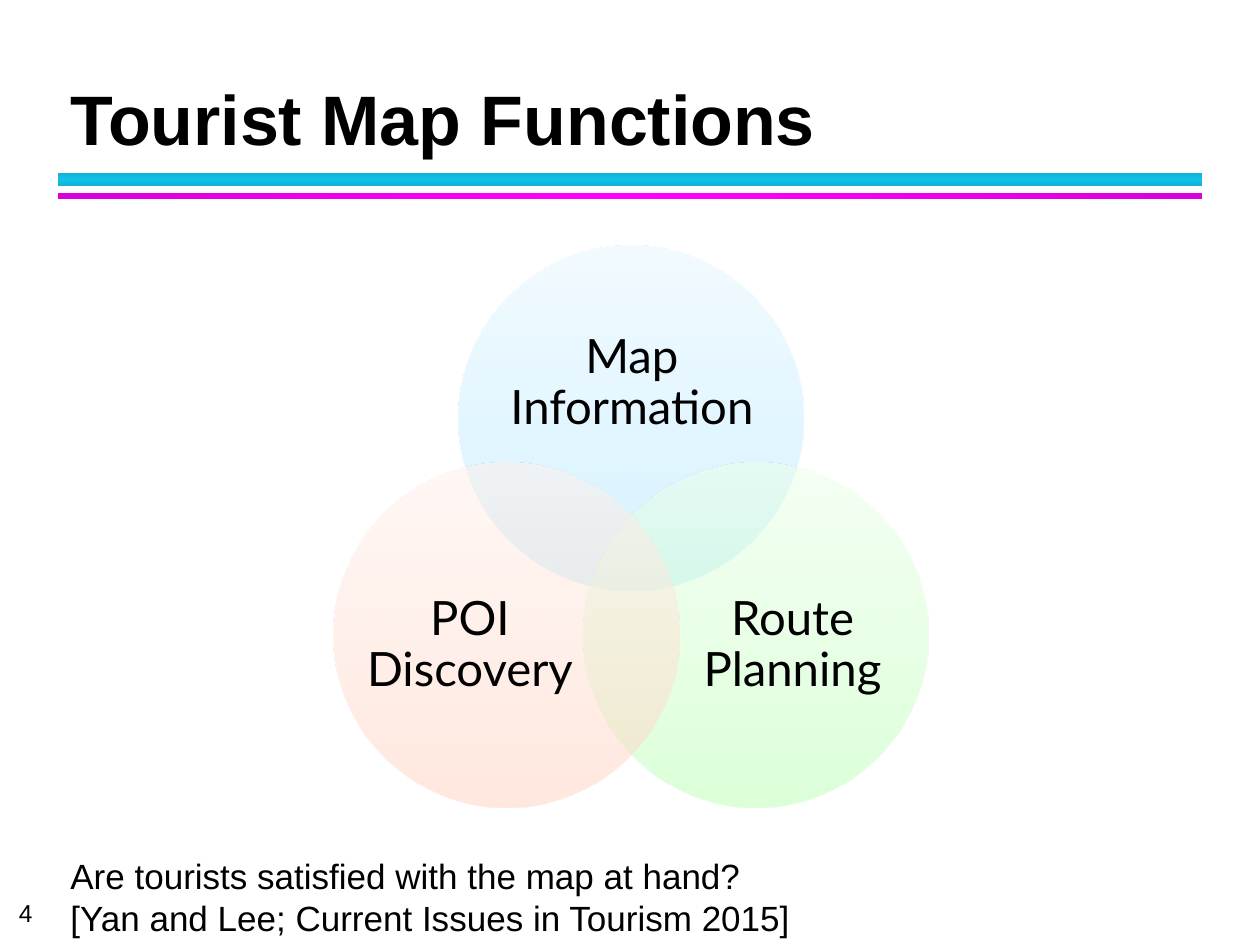
from dataclasses import dataclass

import lxml.etree
import pptx
import pptx.dml.color
import pptx.enum.shapes
import pptx.enum.text
import pptx.oxml.ns
import pptx.util
from pptx.util import Inches

ALIGN = pptx.enum.text.PP_ALIGN
ANCHOR = pptx.enum.text.MSO_ANCHOR
SHAPE = pptx.enum.shapes.MSO_SHAPE


@dataclass(frozen=True)
class Theme:
    ink: str = "000000"
    main_font: str = "Arial"
    diagram_font: str = "Lato"
    title_size: int = 40
    label_size: int = 27
    note_size: int = 20
    number_size: int = 14
    cyan_bar: tuple = ((0, "10B0D3"), (50, "12C2E9"), (100, "10B0D3"))
    magenta_bar: tuple = ((0, "DA00DA"), (50, "FF00FF"), (100, "DA00DA"))
    blue: tuple = ((0, "A7E6FF"), (35, "C1EDFF"), (100, "E7F8FF"))
    green: tuple = ((0, "B9FFB2"), (35, "CDFFC9"), (100, "ECFFEA"))
    peach: tuple = ((0, "FFD2BD"), (35, "FFDED0"), (100, "FFF2ED"))


class SlideBuilder:
    def __init__(self, slide, theme):
        self.slide = slide
        self.theme = theme

    def style(self, paragraph, size, font, bold=False):
        paragraph.font.size = pptx.util.Pt(size)
        paragraph.font.name = font
        paragraph.font.bold = bold
        paragraph.font.color.rgb = pptx.dml.color.RGBColor.from_string(self.theme.ink)

    def title(self, text, left, top, width, height):
        heading = self.slide.shapes.title
        heading.left, heading.top = Inches(left), Inches(top)
        heading.width, heading.height = Inches(width), Inches(height)
        frame = heading.text_frame
        frame.text = text
        frame.vertical_anchor = ANCHOR.BOTTOM
        frame.auto_size = pptx.enum.text.MSO_AUTO_SIZE.NONE
        paragraph = frame.paragraphs[0]
        paragraph.alignment = ALIGN.LEFT
        paragraph.line_spacing = pptx.util.Pt(36)
        self.style(paragraph, self.theme.title_size, self.theme.main_font, bold=True)

    def gradient_shape(self, kind, box, stops, angle, opacity=100):
        """Add an unlined shape; angle is clockwise degrees, stops are in percent."""
        shape = self.slide.shapes.add_shape(kind, *map(Inches, box))
        shape.shadow.inherit = False
        shape.line.fill.background()
        shape.fill.gradient()
        gradient = shape.fill._fill._gradFill
        qn = pptx.oxml.ns.qn
        for child in list(gradient):
            gradient.remove(child)
        stop_list = lxml.etree.SubElement(gradient, qn("a:gsLst"))
        for position, color in stops:
            stop = lxml.etree.SubElement(stop_list, qn("a:gs"), pos=str(position * 1000))
            rgb = lxml.etree.SubElement(stop, qn("a:srgbClr"), val=color)
            if opacity < 100:
                lxml.etree.SubElement(rgb, qn("a:alpha"), val=str(opacity * 1000))
        lxml.etree.SubElement(gradient, qn("a:lin"), ang=str(angle * 60000), scaled="0")

    def text(self, lines, box, size, font, anchor=ANCHOR.TOP, align=ALIGN.LEFT,
             insets=(0, 0, 0, 0), wrap=True, line_spacing=None):
        frame = self.slide.shapes.add_textbox(*map(Inches, box)).text_frame
        frame.word_wrap = wrap
        frame.vertical_anchor = anchor
        (frame.margin_left, frame.margin_top,
         frame.margin_right, frame.margin_bottom) = map(Inches, insets)
        frame.text = "\n".join(lines)
        for paragraph in frame.paragraphs:
            paragraph.alignment = align
            paragraph.line_spacing = line_spacing
            self.style(paragraph, size, font)

    def venn_circle(self, label, center, diameter, label_box, stops):
        x, y = center
        circle_box = (x - diameter / 2, y - diameter / 2, diameter, diameter)
        self.gradient_shape(SHAPE.OVAL, circle_box, stops, angle=270, opacity=50)
        self.text([label], label_box, self.theme.label_size, self.theme.diagram_font,
                  anchor=ANCHOR.MIDDLE, align=ALIGN.CENTER, line_spacing=0.9)


def main():
    presentation = pptx.Presentation()
    presentation.slide_width, presentation.slide_height = Inches(10), Inches(7.5)
    theme = Theme()
    title_only = presentation.slide_layouts[5]
    builder = SlideBuilder(presentation.slides.add_slide(title_only), theme)

    margin = 0.46
    builder.text(["4"], (0.1, 7.13, 0.34, 0.23), theme.number_size, theme.main_font,
                 anchor=ANCHOR.BOTTOM, insets=(0.05, 0, 0, 0))
    builder.gradient_shape(SHAPE.RECTANGLE, (margin, 1.37, 9.08, 0.11), theme.cyan_bar, 90)
    builder.gradient_shape(SHAPE.RECTANGLE, (margin, 1.53, 9.08, 0.05), theme.magenta_bar, 0)
    builder.title("Tourist Map Functions", margin, 0.33, 9.06, 0.99)

    middle, spread, diameter = 5.01, 0.99, 2.74
    upper, lower = 3.32, 5.04
    circles = [
        ("Map Information", (middle, upper), (4.01, 2.43, 2.01, 1.23), theme.blue),
        ("Route Planning", (middle + spread, lower), (5.47, 4.37, 1.64, 1.51), theme.green),
        ("POI Discovery", (middle - spread, lower), (2.91, 4.37, 1.64, 1.51), theme.peach),
    ]
    for label, center, label_box, stops in circles:
        builder.venn_circle(label, center, diameter, label_box, stops)

    builder.text(["Are tourists satisfied with the map at hand?",
                  "[Yan and Lee; Current Issues in Tourism 2015]"],
                 (margin, 6.73, 5.95, 0.77), theme.note_size, theme.main_font,
                 insets=(0.1, 0.05, 0.1, 0.05), wrap=False)
    presentation.save("out.pptx")


if __name__ == "__main__":
    main()
